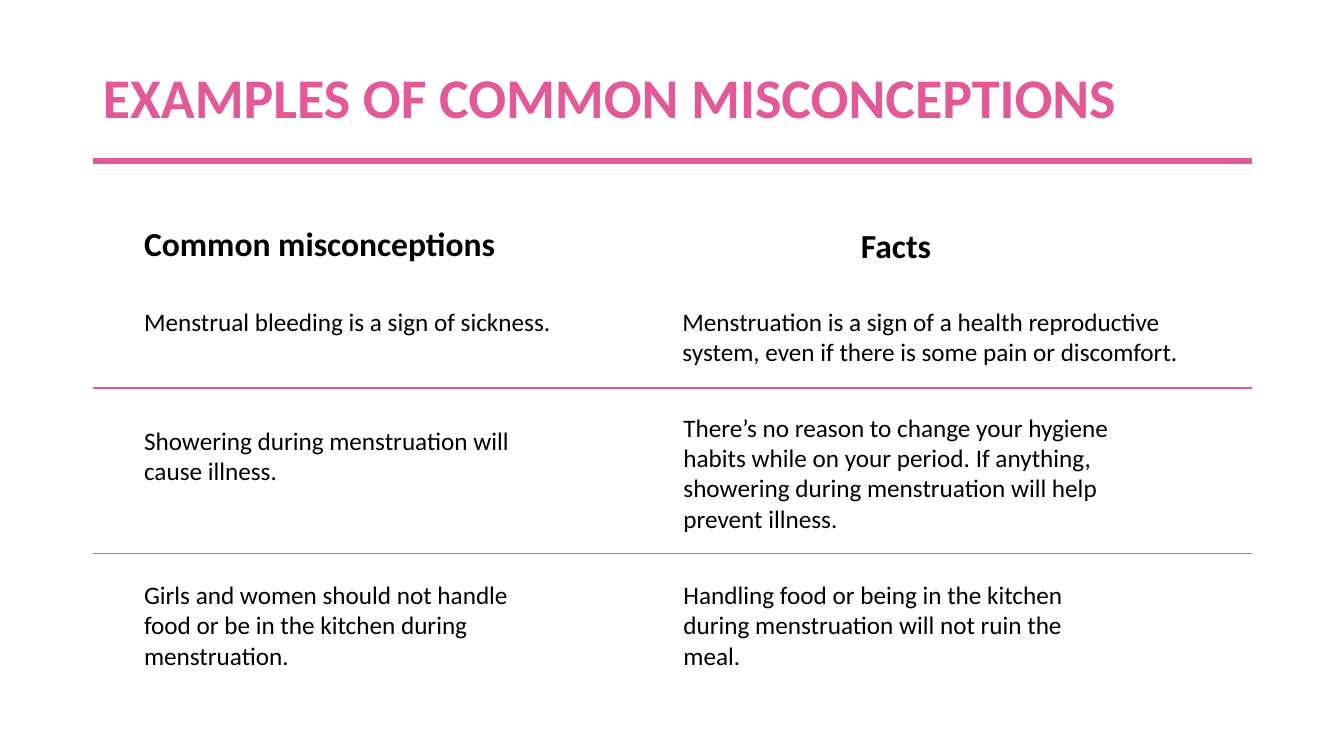
"""Build a slide that sets common misconceptions about menstruation against the facts."""
import pptx
import pptx.dml.color
import pptx.enum.shapes
import pptx.enum.text
import pptx.oxml.ns
import pptx.util
from lxml import etree

Inches = pptx.util.Inches

COLORS = {"pink": "E35997", "black": "000000"}
FONT = "Calibri"
TITLE = "EXAMPLES OF COMMON MISCONCEPTIONS"
HEADINGS = [
    ("Common misconceptions", (1.33, 2.16, 3.72, 0.5)),
    ("Facts", (8.44, 2.18, 0.91, 0.5)),
]
STATEMENTS = [
    ("Menstrual bleeding is a sign of sickness.", (1.33, 2.99, 4.28, 0.4)),
    ("Menstruation is a sign of a health reproductive system, even if there is "
     "some pain or discomfort.", (6.67, 2.99, 5.51, 0.72)),
    ("Showering during menstruation will cause illness.", (1.33, 4.17, 4.28, 0.71)),
    ("There’s no reason to change your hygiene habits while on your period. "
     "If anything, showering during menstruation will help prevent illness.",
     (6.68, 4.04, 4.79, 1.31)),
    ("Girls and women should not handle food or be in the kitchen during "
     "menstruation.", (1.33, 5.7, 4.28, 1.01)),
    ("Handling food or being in the kitchen during menstruation will not ruin "
     "the meal.", (6.68, 5.7, 4.28, 1.01)),
]
RULE_LEFT, RULE_RIGHT = 0.92, 12.42
RULES = [(1.6, 4.5), (3.85, 1), (5.49, 1)]


def write_text(box, text, size=18, bold=False, color="black", wrap=True,
               anchor=pptx.enum.text.MSO_ANCHOR.TOP, line_spacing=1.0):
    frame = box.text_frame
    frame.word_wrap = wrap
    frame.auto_size = pptx.enum.text.MSO_AUTO_SIZE.NONE
    frame.vertical_anchor = anchor
    para = frame.paragraphs[0]
    para.alignment = pptx.enum.text.PP_ALIGN.LEFT
    para.line_spacing = line_spacing
    span = para.add_run()
    span.text = text
    span.font.name = FONT
    span.font.size = pptx.util.Pt(size)
    span.font.bold = bold
    span.font.color.rgb = pptx.dml.color.RGBColor.from_string(COLORS[color])


def add_rule(page, top, width):
    rule = page.shapes.add_connector(
        pptx.enum.shapes.MSO_CONNECTOR.STRAIGHT,
        Inches(RULE_LEFT), Inches(top), Inches(RULE_RIGHT), Inches(top))
    rule.line.color.rgb = pptx.dml.color.RGBColor.from_string(COLORS["pink"])
    rule.line.width = pptx.util.Pt(width)
    etree.SubElement(rule._element.spPr, pptx.oxml.ns.qn("a:effectLst"))


def main():
    deck = pptx.Presentation()
    deck.slide_width, deck.slide_height = Inches(13.33), Inches(7.5)
    page = deck.slides.add_slide(deck.slide_layouts[5])

    title = page.shapes.title
    title.left, title.top = Inches(0.92), Inches(0.4)
    title.width, title.height = Inches(10.27), Inches(1.2)
    write_text(title, TITLE, size=40, bold=True, color="pink",
               anchor=pptx.enum.text.MSO_ANCHOR.MIDDLE, line_spacing=0.9)

    for text, place in HEADINGS:
        box = page.shapes.add_textbox(*map(Inches, place))
        write_text(box, text, size=24, bold=True, wrap=False)
    for text, place in STATEMENTS:
        box = page.shapes.add_textbox(*map(Inches, place))
        write_text(box, text)
    for top, width in RULES:
        add_rule(page, top, width)

    deck.save("out.pptx")


if __name__ == "__main__":
    main()
